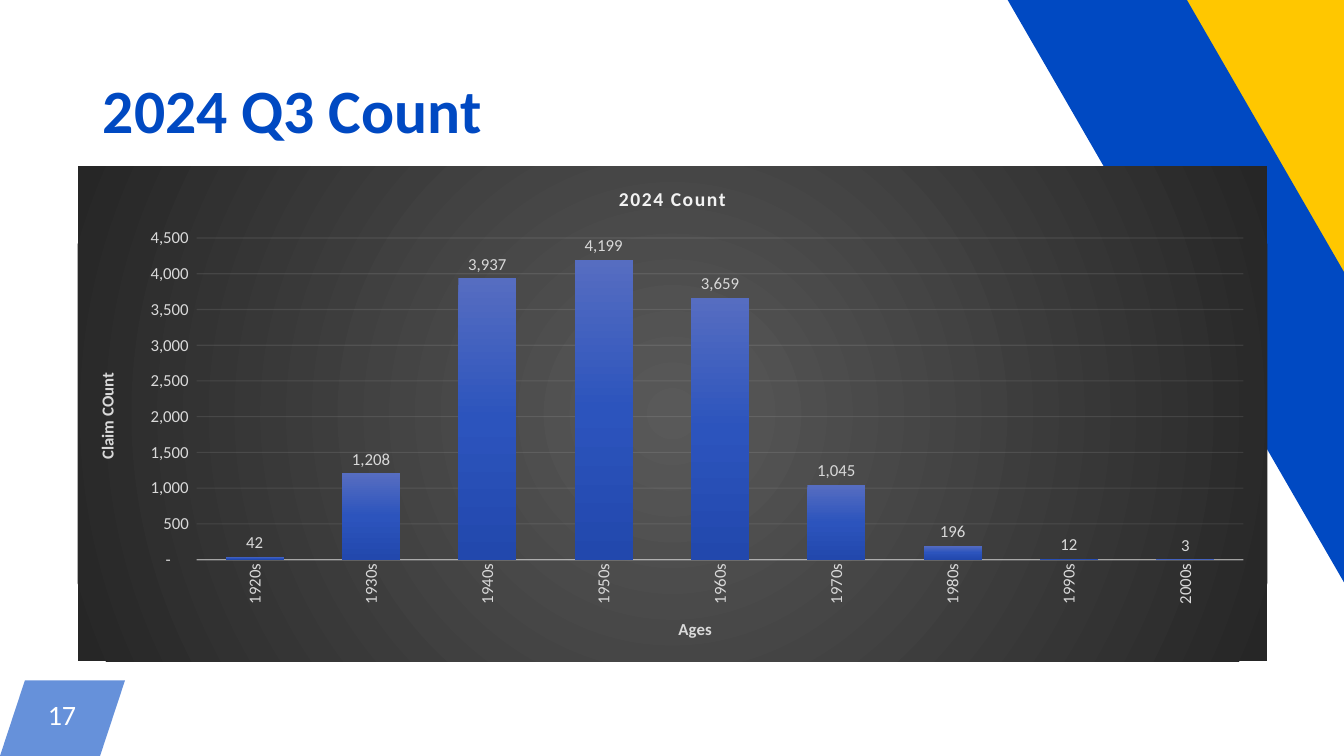
"""Build the 2024 Q3 claim count slide with its column chart."""
from dataclasses import dataclass

from pptx import Presentation
from pptx import slide as sl
from pptx import util as u
from pptx.chart import axis as ax
from pptx.chart import chart as ch
from pptx.chart import data as chart_data
from pptx.dml import color, line as ln
from pptx.enum import chart as chart_enum
from pptx.enum import shapes, text
from pptx.oxml import ns, parse_xml
from pptx.text import text as tx

FONT = "Calibri"
COLORS = {
    "blue": "0049C2",
    "yellow": "FFC700",
    "white": "FFFFFF",
    "pale": "F2F2F2",
    "label": "D9D9D9",
    "bar_top": "566DC1",
    "bar_middle": "2C54BD",
    "bar_bottom": "2248AD",
    "panel_center": "595959",
    "panel_edge": "262626",
}
COUNT_FORMAT = '_(* #,##0_);_(* \\(#,##0\\);_(* "-"??_);_('
CLAIMS = {
    "1920s": 42, "1930s": 1208, "1940s": 3937, "1950s": 4199, "1960s": 3659,
    "1970s": 1045, "1980s": 196, "1990s": 12, "2000s": 3,
}
PLOT_LAYOUT = {"x": 0.1, "y": 0.145, "w": 0.88, "h": 0.65}
LINEAR = '<a:lin ang="5400000" scaled="0"/>'
RADIAL = '<a:path path="circle"><a:fillToRect l="50000" t="50000" r="50000" b="50000"/></a:path>'


@dataclass(frozen=True)
class Ornament:
    """A plain filled shape of the slide's frame."""
    kind: shapes.MSO_SHAPE
    left: float
    top: float
    width: float
    height: float
    color: str
    rotation: float = 0
    opacity: int = 100


ORNAMENTS = [
    Ornament(shapes.MSO_SHAPE.PARALLELOGRAM, 0, 6.75, 1.24, 0.75, "blue", opacity=60),
    Ornament(shapes.MSO_SHAPE.RECTANGLE, 12.78, -3.31, 1.97, 9.81, "yellow", 330.2),
    Ornament(shapes.MSO_SHAPE.RECTANGLE, 11.82, -1.95, 1.54, 9.81, "blue", 330),
]


def rgb(name: str) -> color.RGBColor:
    """Return a named colour."""
    return color.RGBColor.from_string(COLORS[name])


def set_opacity(element, percent: int) -> None:
    """Set the opacity of every colour inside an element."""
    for node in element.iter(ns.qn("a:srgbClr")):
        node.append(parse_xml(f'<a:alpha {ns.nsdecls("a")} val="{percent * 1000}"/>'))


def style_line(line: ln.LineFormat, width: float, opacity: int) -> None:
    """Draw a pale translucent line."""
    line.color.rgb = rgb("pale")
    line.width = u.Pt(width)
    set_opacity(line._ln, opacity)


def style_font(font: tx.Font, size: float, name: str, bold: bool = False) -> None:
    """Set typeface, size, colour and weight."""
    font.name = FONT
    font.size = u.Pt(size)
    font.bold = bold
    font.color.rgb = rgb(name)


def add_run(paragraph: tx._Paragraph, words: str, size: float, name: str,
            bold: bool = False) -> tx._Run:
    """Append a formatted run."""
    run = paragraph.add_run()
    run.text = words
    style_font(run.font, size, name, bold)
    return run


def gradient(names: list[str], direction: str):
    """Return a gradient fill with evenly spaced stops."""
    step = 100000 // (len(names) - 1)
    stops = "".join(
        f'<a:gs pos="{index * step}"><a:srgbClr val="{COLORS[name]}"/></a:gs>'
        for index, name in enumerate(names))
    return parse_xml(
        f'<a:gradFill {ns.nsdecls("a")} rotWithShape="1">'
        f"<a:gsLst>{stops}</a:gsLst>{direction}</a:gradFill>")


def add_ornament(slide: sl.Slide, ornament: Ornament) -> None:
    """Draw one frame shape."""
    bounds = (ornament.left, ornament.top, ornament.width, ornament.height)
    shape = slide.shapes.add_shape(ornament.kind, *map(u.Inches, bounds))
    shape.shadow.inherit = False
    shape.rotation = ornament.rotation
    shape.fill.solid()
    shape.fill.fore_color.rgb = rgb(ornament.color)
    shape.line.fill.background()
    if ornament.kind == shapes.MSO_SHAPE.PARALLELOGRAM:
        shape.adjustments[0] = 0.33
    if ornament.opacity < 100:
        set_opacity(shape._element.spPr, ornament.opacity)


def add_slide_number(slide: sl.Slide) -> None:
    """Write the slide number over its badge."""
    box = slide.shapes.add_textbox(*map(u.Inches, (0.25, 6.75, 0.73, 0.75)))
    frame = box.text_frame
    frame.word_wrap = True
    frame.vertical_anchor = text.MSO_ANCHOR.MIDDLE
    frame.margin_left = frame.margin_right = u.Inches(0.04)
    frame.margin_top = frame.margin_bottom = u.Inches(0.04)
    paragraph = frame.paragraphs[0]
    paragraph.alignment = text.PP_ALIGN.CENTER
    paragraph.line_spacing = u.Pt(17.7)
    add_run(paragraph, "17", 20, "white")


def add_title(slide: sl.Slide) -> None:
    """Fill the title placeholder and bring it above the frame."""
    title = slide.shapes.title
    title.left, title.top, title.width, title.height = map(u.Inches, (0.92, 0.4, 11.5, 1.45))
    title.text_frame.vertical_anchor = text.MSO_ANCHOR.MIDDLE
    paragraph = title.text_frame.paragraphs[0]
    paragraph.alignment = text.PP_ALIGN.LEFT
    paragraph.line_spacing = 0.9
    add_run(paragraph, "2024 Q3 Count", 44, "blue", True)
    slide.shapes._spTree.append(title._element)


def style_axis(axis: ax._BaseAxis, title: str) -> None:
    """Apply the formatting both axes share."""
    axis.major_tick_mark = axis.minor_tick_mark = chart_enum.XL_TICK_MARK.NONE
    style_font(axis.tick_labels.font, 12, "label")
    add_run(axis.axis_title.text_frame.paragraphs[0], title, 12, "label", True)


def style_panel(chart: ch.Chart) -> None:
    """Set the chart background and the plot area's place."""
    panel = parse_xml(f'<c:spPr {ns.nsdecls("c", "a")}><a:ln><a:noFill/></a:ln></c:spPr>')
    panel.insert(0, gradient(["panel_center", "panel_edge"], RADIAL))
    chart._chartSpace.chart.addnext(panel)
    plot_area = chart._chartSpace.chart.plotArea
    for layout in plot_area.findall(ns.qn("c:layout")):
        plot_area.remove(layout)
    places = "".join(f'<c:{key} val="{value}"/>' for key, value in PLOT_LAYOUT.items())
    plot_area.insert(0, parse_xml(
        f'<c:layout {ns.nsdecls("c")}><c:manualLayout><c:layoutTarget val="inner"/>'
        f'<c:xMode val="edge"/><c:yMode val="edge"/>{places}</c:manualLayout></c:layout>'))


def add_claim_chart(slide: sl.Slide) -> None:
    """Chart the claim count by decade."""
    data = chart_data.CategoryChartData(number_format=COUNT_FORMAT)
    data.categories = list(CLAIMS)
    data.add_series("Series 1", list(CLAIMS.values()))
    chart = slide.shapes.add_chart(
        chart_enum.XL_CHART_TYPE.COLUMN_CLUSTERED,
        *map(u.Inches, (0.77, 1.65, 11.8, 4.91)), data).chart
    chart.has_legend = False
    style_font(chart.font, 12, "label")
    style_panel(chart)
    heading = add_run(chart.chart_title.text_frame.paragraphs[0], "2024 Count", 14, "pale", True)
    heading.font._rPr.set("spc", "100")

    categories, values = chart.category_axis, chart.value_axis
    style_axis(categories, "Ages")
    style_axis(values, "Claim COunt")
    style_line(categories.format.line, 1, 54)
    style_line(values.major_gridlines.format.line, 0.75, 10)
    values.format.line.fill.background()
    values.minimum_scale, values.maximum_scale, values.major_unit = 0, 4500, 500
    tick_body = categories._element.find(ns.qn("c:txPr")).find(ns.qn("a:bodyPr"))
    for body in (tick_body, values.axis_title.text_frame._txBody.bodyPr):
        body.set("rot", "-5400000")
        body.set("vert", "horz")

    plot = chart.plots[0]
    plot.gap_width, plot.overlap, plot.vary_by_categories = 100, -24, False
    series = plot.series[0]
    series._element.get_or_add_spPr().append(
        gradient(["bar_top", "bar_middle", "bar_bottom"], LINEAR))
    series.format.line.fill.background()
    labels = series.data_labels
    labels.show_value = True
    labels.position = chart_enum.XL_LABEL_POSITION.OUTSIDE_END
    style_font(labels.font, 12, "label")
    for numbers in (labels, values.tick_labels):
        numbers.number_format = COUNT_FORMAT
        numbers.number_format_is_linked = False


def main() -> None:
    """Build and save the presentation."""
    presentation = Presentation()
    presentation.slide_width, presentation.slide_height = u.Inches(13.33), u.Inches(7.5)
    slide = presentation.slides.add_slide(presentation.slide_layouts[5])
    for ornament in ORNAMENTS:
        add_ornament(slide, ornament)
    add_slide_number(slide)
    add_title(slide)
    add_claim_chart(slide)
    presentation.save("out.pptx")


if __name__ == "__main__":
    main()
